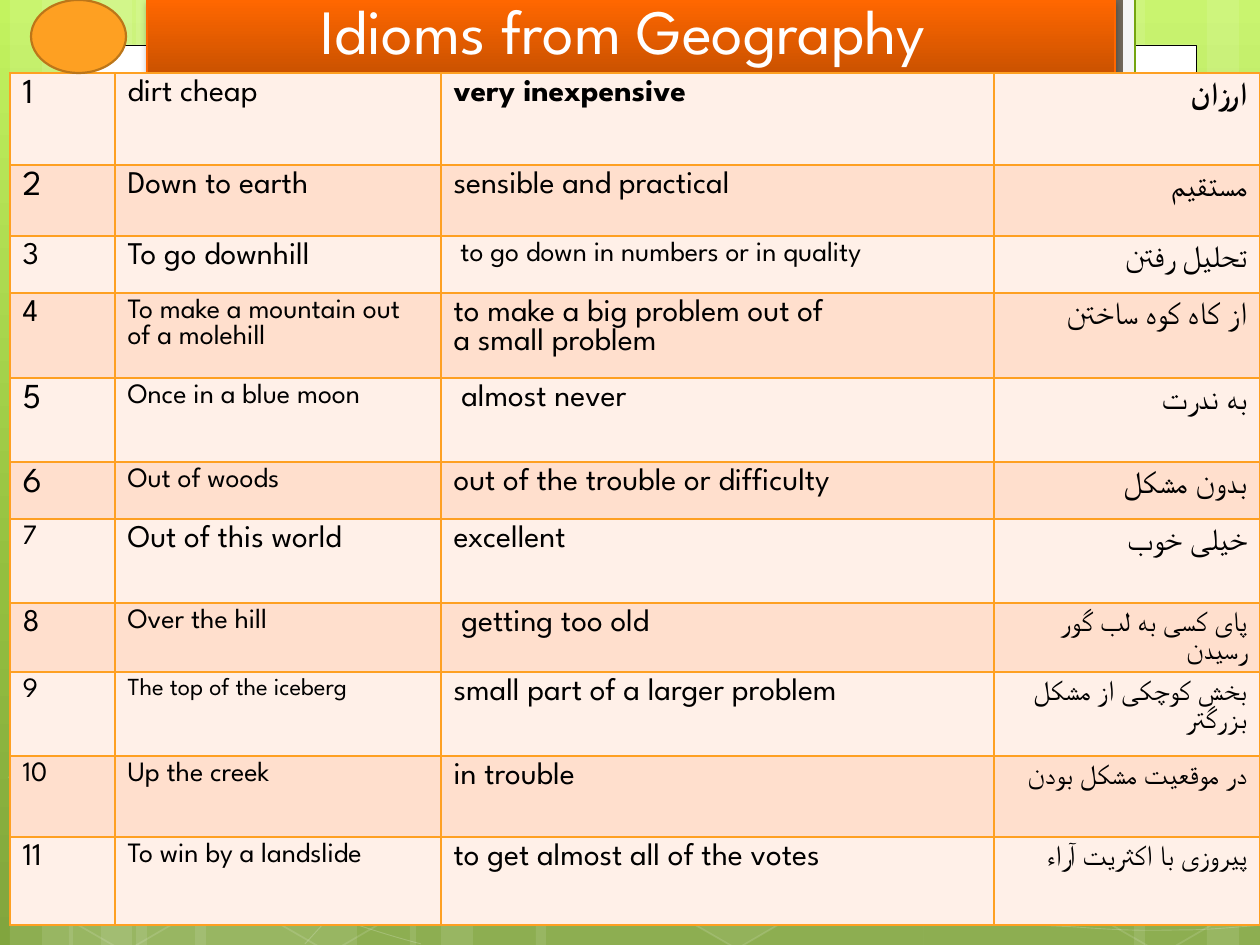
from dataclasses import dataclass

from lxml.etree import SubElement
from pptx import Presentation
from pptx.dml.color import RGBColor
from pptx.enum.shapes import MSO_SHAPE
from pptx.enum.text import MSO_ANCHOR, PP_ALIGN
from pptx.oxml.ns import qn
from pptx.util import Emu, Pt


@dataclass(frozen=True)
class Theme:
    """Colours, font and type sizes of the slide."""
    font: str = "League Spartan"
    head: int = 36
    white: str = "FFFFFF"
    black: str = "000000"
    sky: tuple = ((0, "C3F35F"), (62, "93BF3F"), (100, "81A53E"))
    bar: tuple = ((0, "FF6700"), (100, "CB5200"))
    edge: str = "FF6700"
    tab: str = "F5F5F5"
    rim: str = "74A510"
    clip: str = "71685A"
    gold: str = "FEA022"
    brown: str = "BC7619"
    bands: tuple = ("FFF0E8", "FFDFCD")


THEME = Theme()
SCALE = 914400 // 126
STRIPES = [(136, 221), (10, 63), (42, 105), (195, 221), (69, 63), (101, 105),
           (924, 221), (1207, 63), (1134, 105), (536, 388), (410, 63), (441, 105)]
CURVES = [
    [(9, 848), (77, 852), (145, 856), (239, 854), (334, 853), (451, 850), (577, 838),
     (703, 825), (882, 801), (998, 777), (1113, 753), (1231, 717), (1269, 694)],
    [(9, 601), (45, 581), (82, 562), (152, 543), (224, 524), (326, 496), (437, 488),
     (549, 479), (686, 478), (824, 488), (963, 499), (1194, 537), (1269, 547)],
    [(8, 777), (160, 847), (311, 916), (421, 944)],
    [(9, 728), (48, 742), (88, 756), (161, 776), (234, 795), (344, 827), (450, 848),
     (554, 869), (687, 892), (791, 905), (896, 919), (1008, 924), (1075, 927),
     (1140, 932), (1158, 930), (1191, 930), (1223, 929), (1246, 926), (1269, 925)],
    [(305, 944), (328, 919), (350, 893), (381, 871), (411, 848), (454, 823), (489, 805),
     (524, 788), (546, 780), (592, 767), (638, 754), (722, 737), (766, 728),
     (811, 719), (818, 719), (857, 717), (896, 713), (958, 709), (1000, 708),
     (1044, 707), (1116, 708), (1116, 708), (1144, 708), (1173, 708), (1201, 708),
     (1223, 709), (1245, 711), (1268, 713)],
]
HEXES = [(421, 45, 4, 8), (626, 742, 6, 12), (14, 745, 0, 12), (18, 393, 7, 8),
         (219, 746, 0, 12), (949, 571, 10, 12), (1051, 747, 0, 12), (1051, 396, 7, 8)]
SHARDS = [
    ([(10, 561), (24, 552), (121, 607), (120, 718), (25, 774), (10, 765)], 10),
    ([(1167, 611), (1261, 556), (1271, 562), (1271, 772), (1263, 777), (1167, 722)], 4),
    ([(1167, 261), (1261, 205), (1273, 212), (1271, 422), (1263, 427), (1167, 372)], 0),
]
COLS = [105, 326, 553, 266]
ROWS = [92, 71, 57, 85, 84, 57, 84, 69, 84, 81, 88]
IDIOMS = [
    ("dirt cheap", "very inexpensive", "ارزان", (20, 18, 18, 18)),
    ("Down to earth", "sensible and practical", "مستقیم", (20, 18, 18, 18)),
    ("To go downhill", " to go down in numbers or in quality", "تحلیل رفتن", (18, 18, 16, 18)),
    ("To make a mountain out of a molehill",
     "to make a big problem out of\na small problem", "از کاه کوه ساختن", (18, 16, 18, 18)),
    ("Once in a blue moon", " almost never", "به ندرت", (20, 16, 18, 18)),
    ("Out of woods", "out of the trouble or difficulty", "بدون مشکل", (20, 16, 18, 18)),
    ("Out of this world", "excellent", "خیلی خوب", (16, 18, 18, 18)),
    ("Over the hill", " getting too old", "پای کسی به لب گور رسیدن", (18, 16, 18, 16)),
    ("The top of the iceberg", "small part of a larger problem",
     "بخش کوچکی از مشکل بزرگتر", (16, 14, 18, 16)),
    ("Up the creek", "in trouble", "در موقعیت مشکل بودن", (16, 16, 18, 16)),
    ("To win by a landslide", "to get almost all of the votes",
     "پیروزی با اکثریت آراء", (18, 16, 18, 16)),
]


def px(size):
    """Turn px into EMU."""
    return Emu(size * SCALE)


def tint(name):
    """Turn a hex name into a colour."""
    return RGBColor.from_string(name)


def fade(shape, where, part):
    """Make the solid colour of a fill or line partly clear."""
    for node in shape.element.xpath(f"./p:spPr/{where}a:solidFill/a:srgbClr"):
        SubElement(node, qn("a:alpha"), val=str(part * 1000))


def dress(shape, fill=None, line=None, width=1, clear=100, haze=100):
    """Set fill, line and their opacity, without a shadow."""
    shape.shadow.inherit = False
    if fill:
        shape.fill.solid()
        shape.fill.fore_color.rgb = tint(fill)
        if clear < 100:
            fade(shape, "", clear)
    else:
        shape.fill.background()
    if line:
        shape.line.color.rgb = tint(line)
        shape.line.width = Pt(width)
        if haze < 100:
            fade(shape, "a:ln/", haze)
    else:
        shape.line.fill.background()


def blend(fill, node, stops):
    """Paint a gradient from top to bottom."""
    fill.gradient()
    fill.gradient_angle = 270
    group = node.xpath(".//a:gsLst")[0]
    for old in list(group):
        group.remove(old)
    for place, name in stops:
        stop = SubElement(group, qn("a:gs"), pos=str(place * 1000))
        SubElement(stop, qn("a:srgbClr"), val=name)


def add_form(slide, kind, box, **look):
    """Add a preset shape."""
    shape = slide.shapes.add_shape(kind, *map(px, box))
    dress(shape, **look)
    return shape


def add_path(slide, points, close, **look):
    """Add an outline through the points."""
    pen = slide.shapes.build_freeform(*points[0], scale=SCALE)
    pen.add_line_segments(points[1:], close=close)
    shape = pen.convert_to_shape()
    dress(shape, **look)
    return shape


def bend(shape):
    """Turn each three line segments into one cubic curve."""
    lines = shape.element.xpath(".//a:lnTo")
    for start in range(0, len(lines), 3):
        curve = SubElement(lines[start].getparent(), qn("a:cubicBezTo"))
        for line in lines[start:start + 3]:
            curve.append(line[0])
            line.getparent().remove(line)


def add_decor(slide):
    """Add the stripes, curves and hexagons of the backdrop."""
    white = THEME.white
    for left, width in STRIPES:
        add_form(slide, MSO_SHAPE.RECTANGLE, (left, 0, width, 945), fill=white, clear=10)
    for knots in CURVES:
        bend(add_path(slide, knots, False, line=white, width=0.5, haze=20))
    for left, top, clear, haze in HEXES:
        shape = add_form(slide, MSO_SHAPE.HEXAGON, (left, top, 221, 192),
                         fill=white if clear else None, clear=clear, line=white, haze=haze)
        shape.adjustments[0] = 0.285
        shape.rotation = 30
    for points, clear in SHARDS:
        add_path(slide, points, True, fill=white if clear else None, clear=clear,
                 line=white, haze=12)


def style(para, size, name, bold=False):
    """Set the font of every run in a paragraph."""
    for run in para.runs:
        font = run.font
        font.name, font.size, font.bold = THEME.font, Pt(size), bold
        font.color.rgb = tint(name)


def add_title(slide):
    """Add the title bar with its soft shadow."""
    bar = add_form(slide, MSO_SHAPE.RECTANGLE, (147, 0, 968, 73), line=THEME.edge, width=0.75)
    blend(bar.fill, bar.element, THEME.bar)
    glow = SubElement(bar.element.xpath("./p:spPr/a:effectLst")[0], qn("a:outerShdw"),
                      blurRad=str(Pt(4)), dist=str(Pt(2)), dir="5400000", rotWithShape="0")
    SubElement(SubElement(glow, qn("a:srgbClr"), val=THEME.black), qn("a:alpha"), val="28000")
    frame = bar.text_frame
    frame.word_wrap = True
    frame.vertical_anchor = MSO_ANCHOR.BOTTOM
    frame.margin_right = px(28)
    frame.text = "Idioms from Geography"
    frame.paragraphs[0].alignment = PP_ALIGN.CENTER
    style(frame.paragraphs[0], THEME.head, THEME.white)


def fill_cell(cell, text, size, band, bold, right):
    """Write one cell with its borders and fill."""
    cell.text_frame.text = text
    for para in cell.text_frame.paragraphs:
        style(para, size, THEME.black, bold)
        if right:
            para.alignment = PP_ALIGN.RIGHT
            para._p.get_or_add_pPr().set("rtl", "1")
    for side in "LRTB":
        line = SubElement(cell._tc.get_or_add_tcPr(), qn(f"a:ln{side}"), w=str(Pt(1)))
        SubElement(SubElement(line, qn("a:solidFill")), qn("a:srgbClr"), val=THEME.gold)
    cell.fill.solid()
    cell.fill.fore_color.rgb = tint(band)


def add_grid(slide):
    """Add the table of idioms."""
    box = (10, 73, sum(COLS), sum(ROWS))
    grid = slide.shapes.add_table(len(ROWS), len(COLS), *map(px, box)).table
    grid.first_row = grid.horz_banding = False
    for col, width in zip(grid.columns, COLS):
        col.width = px(width)
    for row, (*words, sizes) in enumerate(IDIOMS):
        grid.rows[row].height = px(ROWS[row])
        for col, text in enumerate([str(row + 1), *words]):
            fill_cell(grid.cell(row, col), text, sizes[col], THEME.bands[row % 2],
                      row == 0 and col > 1, col == 3)


def main():
    """Build and save the slide."""
    deck = Presentation()
    deck.slide_width, deck.slide_height = px(1260), px(945)
    slide = deck.slides.add_slide(deck.slide_layouts[6])
    blend(slide.background.fill, slide.element, THEME.sky)
    add_decor(slide)
    rect = MSO_SHAPE.RECTANGLE
    add_form(slide, rect, (63, 45, 1134, 852), fill=THEME.white, line=THEME.black, width=0.5)
    add_form(slide, rect, (629, -3, 506, 96), fill=THEME.tab, line=THEME.rim, width=1.25)
    add_form(slide, rect, (640, -3, 483, 86), fill=THEME.clip)
    add_title(slide)
    add_grid(slide)
    add_form(slide, MSO_SHAPE.OVAL, (31, 0, 95, 73), fill=THEME.gold, line=THEME.brown, width=1.25)
    deck.save("out.pptx")


if __name__ == "__main__":
    main()
